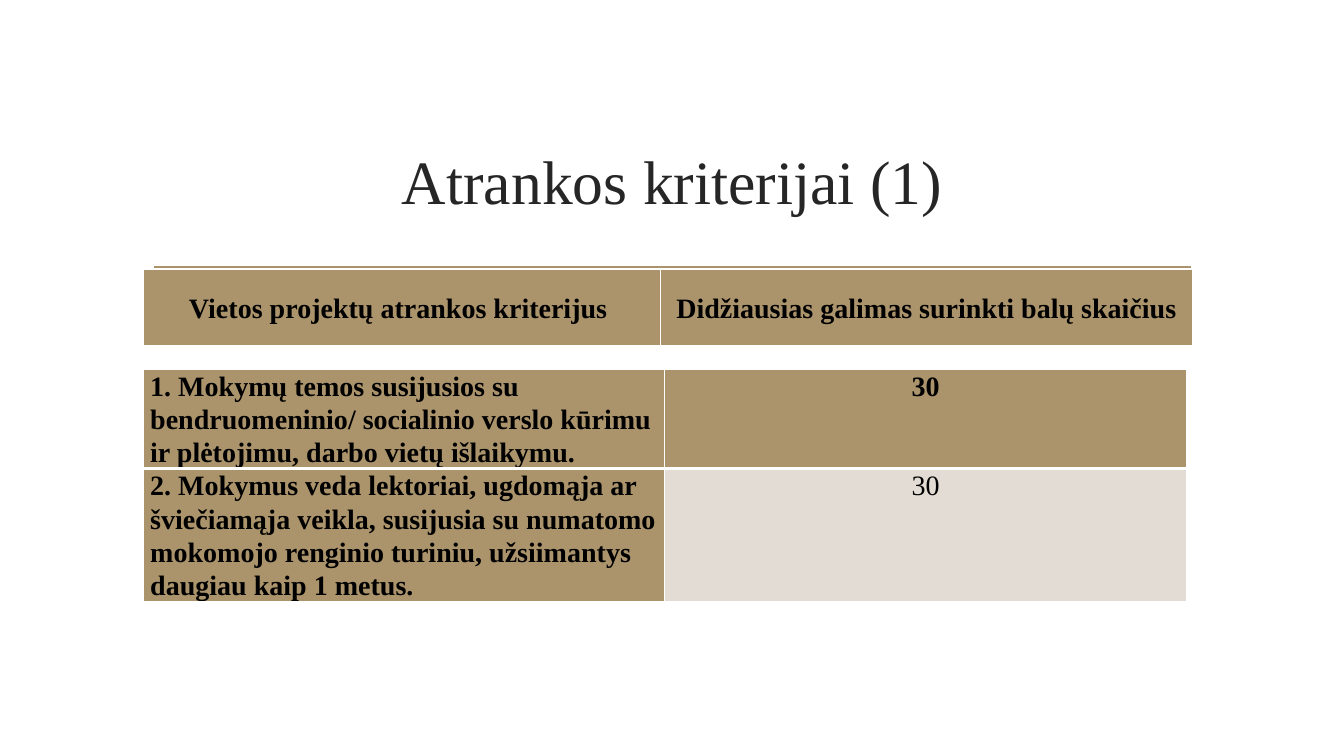
from lxml.etree import SubElement as Sub
from pptx import Presentation
from pptx.dml.color import RGBColor
from pptx.enum.shapes import MSO_CONNECTOR as Conn
from pptx.enum.text import MSO_ANCHOR as Anchor, PP_ALIGN as Align
from pptx.oxml.ns import qn
from pptx.util import Inches, Pt

# Content
TITLE = "Atrankos kriterijai (1)"
HEAD = [("Vietos projektų atrankos kriterijus ",
         "Didžiausias galimas surinkti balų skaičius")]
ROWS = [
    ("1. Mokymų temos susijusios su bendruomeninio/ socialinio verslo "
     "kūrimu ir plėtojimu, darbo vietų išlaikymu.", "30"),
    ("2. Mokymus veda lektoriai, ugdomąja ar šviečiamąja veikla, susijusia "
     "su numatomo mokomojo renginio turiniu, užsiimantys daugiau kaip "
     "1 metus.", "30"),
]

# Style and grid
FONT = "Times New Roman"
GOLD, PALE, WHITE = "AB946B", "E2DCD4", "FFFFFF"
BLACK, GREY = "000000", "262626"
LEFT = 1.42
THIN, THICK = 1, 3


def color(code):
    return RGBColor.from_string(code)


def write(para, text, size, code, bold=False):
    run = para.add_run()
    run.text = text
    font = run.font
    font.name, font.size, font.bold = FONT, Pt(size), bold
    font.color.rgb = color(code)


def border(cell, first):
    props = cell._tc.get_or_add_tcPr()
    widths = {"L": THIN, "R": THIN, "T": THIN if first else THICK,
              "B": THICK if first else THIN}
    for side, width in widths.items():
        line = Sub(props, qn(f"a:ln{side}"), w=str(Pt(width)))
        fill = Sub(line, qn("a:solidFill"))
        Sub(fill, qn("a:srgbClr"), val=WHITE)


def grid(slide, rows, top, cols, heights, head=False):
    frame = slide.shapes.add_table(
        len(rows), len(cols), Inches(LEFT), Inches(top),
        Inches(sum(cols)), Inches(sum(heights)))
    table = frame.table
    for col, width in zip(table.columns, cols):
        col.width = Inches(width)
    for r, texts in enumerate(rows):
        table.rows[r].height = Inches(heights[r])
        for c, text in enumerate(texts):
            cell = table.cell(r, c)
            plain = r > 0 and c > 0
            border(cell, r == 0)
            cell.fill.solid()
            cell.fill.fore_color.rgb = color(PALE if plain else GOLD)
            cell.margin_left = cell.margin_right = Inches(0.07)
            cell.margin_top = cell.margin_bottom = 0
            cell.vertical_anchor = Anchor.MIDDLE if head else Anchor.TOP
            para = cell.text_frame.paragraphs[0]
            para.alignment = Align.CENTER if head or c else Align.LEFT
            para.line_spacing = 1.07
            write(para, text, 20, BLACK, not plain)


deck = Presentation()
deck.slide_width, deck.slide_height = Inches(13.33), Inches(7.5)
slide = deck.slides.add_slide(deck.slide_layouts[5])

# Rule under the title
rule = slide.shapes.add_connector(
    Conn.STRAIGHT, Inches(1.53), Inches(2.65), Inches(11.81), Inches(2.65))
rule.line.color.rgb = color(GOLD)
rule.line.width = Pt(1.25)
Sub(rule._element.spPr, qn("a:effectLst"))

# Title
title = slide.shapes.title
title.left, title.top = Inches(LEFT), Inches(1.07)
title.width, title.height = Inches(10.5), Inches(1.43)
title.text_frame.vertical_anchor = Anchor.MIDDLE
para = title.text_frame.paragraphs[0]
para.alignment = Align.CENTER
write(para, TITLE, 44, GREY)

# Criteria and their header
grid(slide, ROWS, 3.66, (5.17, 5.18), (0.98, 1.31))
grid(slide, HEAD, 2.67, (5.13, 5.28), (0.77,), head=True)

deck.save("out.pptx")
